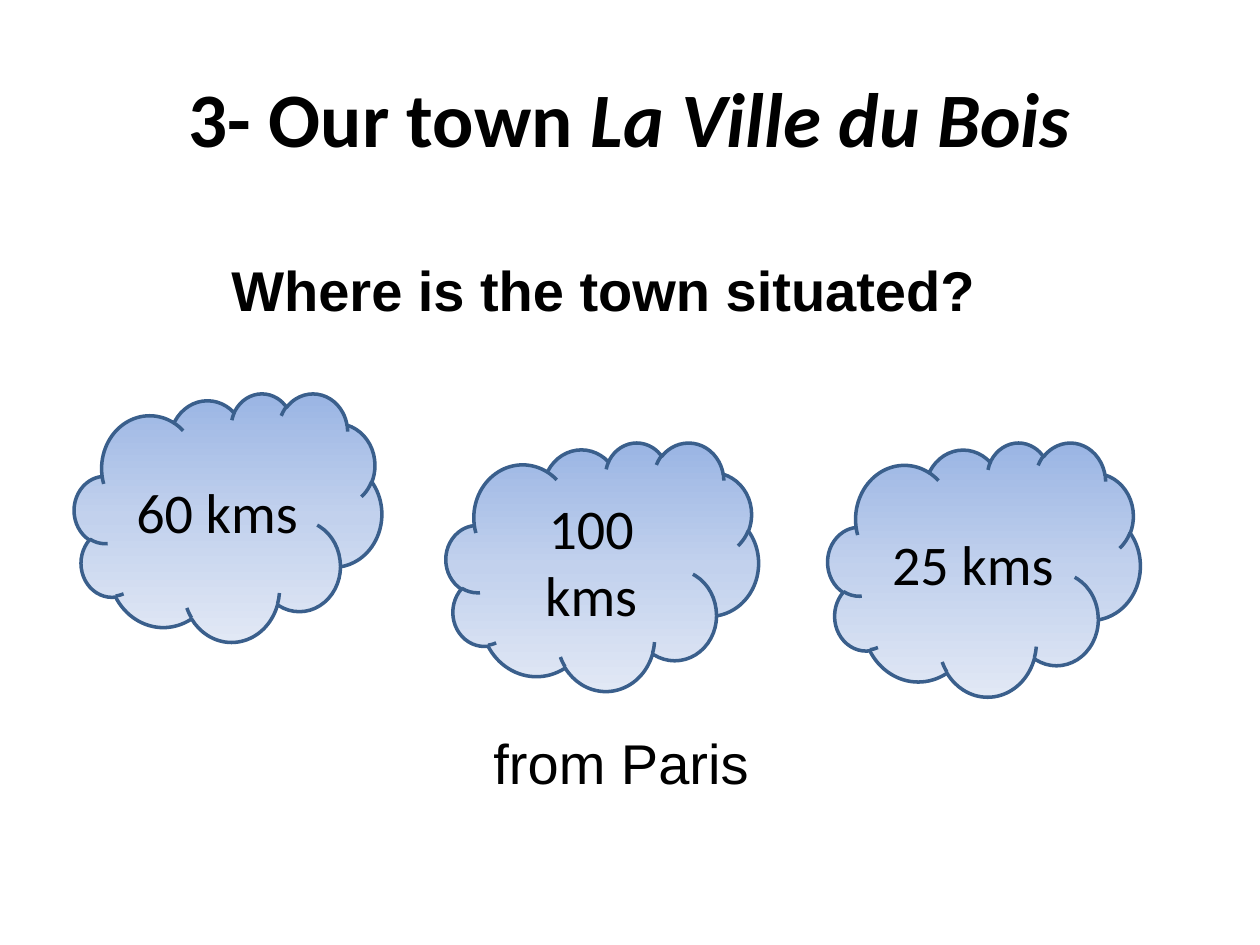
from copy import deepcopy

from pptx import Presentation
from pptx import util as u
from pptx.dml.color import RGBColor
from pptx.enum import shapes, text

BLACK = RGBColor(0x00, 0x00, 0x00)
OUTLINE = RGBColor(0x3A, 0x5F, 0x8C)
SKY = [RGBColor(0x9A, 0xB5, 0xE4), RGBColor(0xC2, 0xD1, 0xED), RGBColor(0xE1, 0xE8, 0xF5)]


class Deck:
    heading_font = "Calibri"
    body_font = "Arial"
    title_size = 44
    text_size = 32

    def __init__(self, width, height):
        self.prs = Presentation()
        self.prs.slide_width = u.Inches(width)
        self.prs.slide_height = u.Inches(height)
        self.slide = self.prs.slides.add_slide(self.prs.slide_layouts[6])

    def box(self, x, y, w, h):
        sw, sh = self.prs.slide_width, self.prs.slide_height
        return int(x * sw), int(y * sh), int(w * sw), int(h * sh)

    def run(self, p, words, font, size, bold=False, italic=False):
        p.alignment = text.PP_ALIGN.CENTER
        r = p.add_run()
        r.text = words
        r.font.name, r.font.size = font, u.Pt(size)
        r.font.bold, r.font.italic = bold, italic
        r.font.color.rgb = BLACK

    def text_frame(self, area, anchor):
        tf = self.slide.shapes.add_textbox(*self.box(*area)).text_frame
        tf.word_wrap = True
        tf.vertical_anchor = anchor
        return tf

    def title(self, area, plain, emphasis):
        p = self.text_frame(area, text.MSO_ANCHOR.MIDDLE).paragraphs[0]
        self.run(p, plain, self.heading_font, self.title_size, bold=True)
        self.run(p, emphasis, self.heading_font, self.title_size, bold=True, italic=True)

    def body(self, area, question, ending):
        tf = self.text_frame(area, text.MSO_ANCHOR.TOP)
        tf.margin_top = u.Inches(0.41)
        first, last = tf.paragraphs[0], tf.add_paragraph()
        last.space_before = u.Pt(232)
        for p, words, bold, indent in ((first, question, True, 0.41), (last, ending, False, 0.13)):
            self.run(p, words, self.body_font, self.text_size, bold=bold)
            p._p.get_or_add_pPr().set("marR", str(u.Inches(indent)))

    def cloud(self, area, words):
        sp = self.slide.shapes.add_shape(shapes.MSO_SHAPE.CLOUD, *self.box(*area))
        sp.shadow.inherit = False
        sp.line.color.rgb, sp.line.width = OUTLINE, u.Pt(2)
        sp.fill.gradient()
        sp.fill.gradient_angle = 270
        stops = sp.fill._fill._gradFill.gsLst
        stops.insert(1, deepcopy(stops[0]))
        for i, (stop, color) in enumerate(zip(sp.fill.gradient_stops, SKY)):
            stop.position, stop.color.rgb = i / 2, color
        tf = sp.text_frame
        tf.word_wrap = True
        tf.vertical_anchor = text.MSO_ANCHOR.MIDDLE
        self.run(tf.paragraphs[0], words, self.heading_font, self.text_size)


def main():
    deck = Deck(10, 7.5)
    deck.title((0.05, 0.04, 0.9, 0.167), "3- Our town ", "La Ville du Bois")
    deck.body((0.035, 0.216, 0.929, 0.633), "Where is the town situated?", "from Paris")
    for area, distance in (
        ((0.059, 0.416, 0.244, 0.263), "60 kms"),
        ((0.354, 0.468, 0.248, 0.263), "100 kms"),
        ((0.657, 0.468, 0.248, 0.269), "25 kms"),
    ):
        deck.cloud(area, distance)
    deck.prs.save("out.pptx")


if __name__ == "__main__":
    main()
